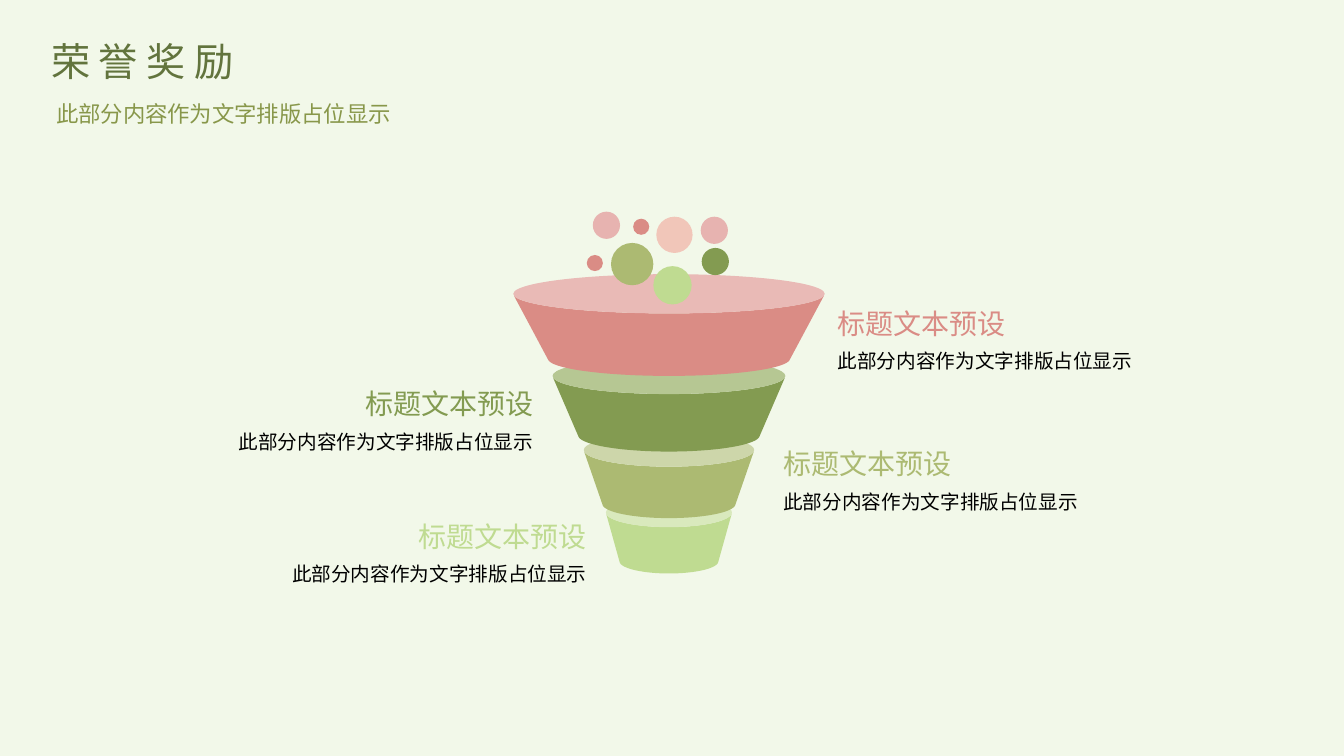
from math import cos, sin, radians
from lxml.etree import SubElement
from pptx import Presentation
from pptx.dml.color import RGBColor
from pptx.enum.shapes import MSO_SHAPE
from pptx.enum.text import MSO_ANCHOR, MSO_AUTO_SIZE, PP_ALIGN
from pptx.oxml.ns import qn
from pptx.util import Inches, Pt

FONT = "Noto Sans CJK SC"
CREAM = RGBColor(0xF2, 0xF8, 0xE9)
BLACK = RGBColor(0x00, 0x00, 0x00)
MOSS = RGBColor(0x62, 0x74, 0x3D)
FERN = RGBColor(0x88, 0x97, 0x4A)
ROSE = RGBColor(0xDA, 0x8C, 0x85)
BLUSH = RGBColor(0xE9, 0xBA, 0xB6)
PINK = RGBColor(0xE7, 0xB3, 0xB0)
PEACH = RGBColor(0xF1, 0xC6, 0xB9)
LEAF = RGBColor(0x83, 0x9B, 0x51)
SAGE = RGBColor(0xB6, 0xC7, 0x93)
OLIVE = RGBColor(0xAC, 0xBA, 0x72)
STRAW = RGBColor(0xCD, 0xD6, 0xAA)
LIME = RGBColor(0xBF, 0xDB, 0x91)
MIST = RGBColor(0xD9, 0xE9, 0xBD)

HEAD = "荣誉奖励"
LABEL = "标题文本预设"
NOTE = "此部分内容作为文字排版占位显示"

# top, rim width, rim height, foot width, foot bend, base; all from the box top
TIERS = [
    (0.62, 3.09, 0.39, 2.40, 0.17, 1.63, ROSE, BLUSH),
    (1.45, 2.31, 0.36, 1.80, 0.16, 2.38, LEAF, SAGE),
    (2.20, 1.69, 0.33, 1.32, 0.14, 3.04, OLIVE, STRAW),
    (2.84, 1.25, 0.29, 0.98, 0.12, 3.59, LIME, MIST),
]
BALLS = [
    (1.39, 0.54, 0.38, LIME), (1.42, 0.05, 0.36, PEACH),
    (0.97, 0.31, 0.42, OLIVE), (1.87, 0.36, 0.27, LEAF),
    (1.86, 0.05, 0.27, PINK), (0.79, 0, 0.27, PINK),
    (0.73, 0.43, 0.16, ROSE), (1.19, 0.07, 0.16, ROSE),
]
NOTES = [
    (8.21, 2.99, ROSE, PP_ALIGN.LEFT), (7.67, 4.38, OLIVE, PP_ALIGN.LEFT),
    (1.01, 3.79, LEAF, PP_ALIGN.RIGHT), (1.54, 5.10, LIME, PP_ALIGN.RIGHT),
]


def paint(shape, color):
    """Give a shape a flat fill without line or shadow."""
    shape.shadow.inherit = False
    shape.fill.solid()
    shape.fill.fore_color.rgb = color
    shape.line.fill.background()


def oval(shapes, left, top, width, height, color):
    """Draw one flat ellipse."""
    box = map(Inches, (left, top, width, height))
    paint(shapes.add_shape(MSO_SHAPE.OVAL, *box), color)


def arc(mid, level, wide, bend):
    """Return the points of a lower half ellipse from right to left."""
    turns = [radians(step) for step in range(6, 175, 4)]
    return [(Inches(mid + wide / 2 * cos(t)), Inches(level + bend * sin(t)))
            for t in turns]


def write(shape, text, size, color, align=PP_ALIGN.LEFT, **form):
    """Put one formatted paragraph into a shape."""
    frame = shape.text_frame
    frame.text = text
    look = {"word_wrap": False, "auto_size": MSO_AUTO_SIZE.NONE,
            "vertical_anchor": MSO_ANCHOR.TOP, **form}
    for key, value in look.items():
        setattr(frame, key, value)
    para = frame.paragraphs[0]
    para.alignment = align
    run = para.runs[0]
    for key, value in {"name": FONT, "size": Pt(size)}.items():
        setattr(run.font, key, value)
    run.font.color.rgb = color
    SubElement(run.font._element, qn("a:ea")).set("typeface", FONT)
    return para


def header(slide, left, top):
    """Place the title and the line below it."""
    title = slide.shapes.title
    form = {"left": left, "top": top, "width": 2.75, "height": 0.57}
    for key, value in form.items():
        setattr(title, key, Inches(value))
    grow = MSO_AUTO_SIZE.SHAPE_TO_FIT_TEXT
    para = write(title, HEAD, 28, MOSS, word_wrap=True, auto_size=grow)
    para.line_spacing = 1.0
    para.space_before = Pt(0)
    para.runs[0].font._element.set("spc", "600")
    box = map(Inches, (left, top + 0.57, 3.57, 0.4))
    para = write(slide.shapes.add_textbox(*box), NOTE, 16, FERN,
                 PP_ALIGN.RIGHT, auto_size=grow)
    para.line_spacing = 1.2


def funnel(slide, left, top, width):
    """Stack the tiers from the lowest up and drop the balls in."""
    shapes = slide.shapes.add_group_shape().shapes
    mid = left + width / 2
    for high, rim, tall, foot, bend, base, color, pale in reversed(TIERS):
        edge = arc(mid, top + high + tall / 2, rim, tall / 2)
        low = arc(mid, top + base - bend, foot, bend)
        start, *rest = edge + low[::-1]
        form = shapes.build_freeform(*start)
        form.add_line_segments(rest, close=True)
        paint(form.convert_to_shape(), color)
        oval(shapes, mid - rim / 2, top + high, rim, tall, pale)
    for x, y, size, color in BALLS:
        oval(shapes, left + x, top + y, size, size, color)


def caption(slide, left, top, width, color, align):
    """Place a coloured label over its note, flush to one side."""
    shift = width - 1.38 if align == PP_ALIGN.RIGHT else 0
    box = map(Inches, (left + shift, top, 1.38, 0.34))
    write(slide.shapes.add_textbox(*box), LABEL, 20, color, align)
    box = map(Inches, (left, top + 0.38, width, 0.33))
    para = write(slide.shapes.add_textbox(*box), NOTE, 14, BLACK, align,
                 word_wrap=True)
    para.line_spacing = 1.2


def main():
    """Build the slide and save it."""
    deck = Presentation()
    deck.slide_width, deck.slide_height = Inches(13.33), Inches(7.5)
    slide = deck.slides.add_slide(deck.slide_layouts[5])
    slide.background.fill.solid()
    slide.background.fill.fore_color.rgb = CREAM
    funnel(slide, 5.09, 2.1, 3.09)
    for left, top, color, align in NOTES:
        caption(slide, left, top, 4.38, color, align)
    header(slide, 0.41, 0.32)
    deck.save("out.pptx")


if __name__ == "__main__":
    main()
